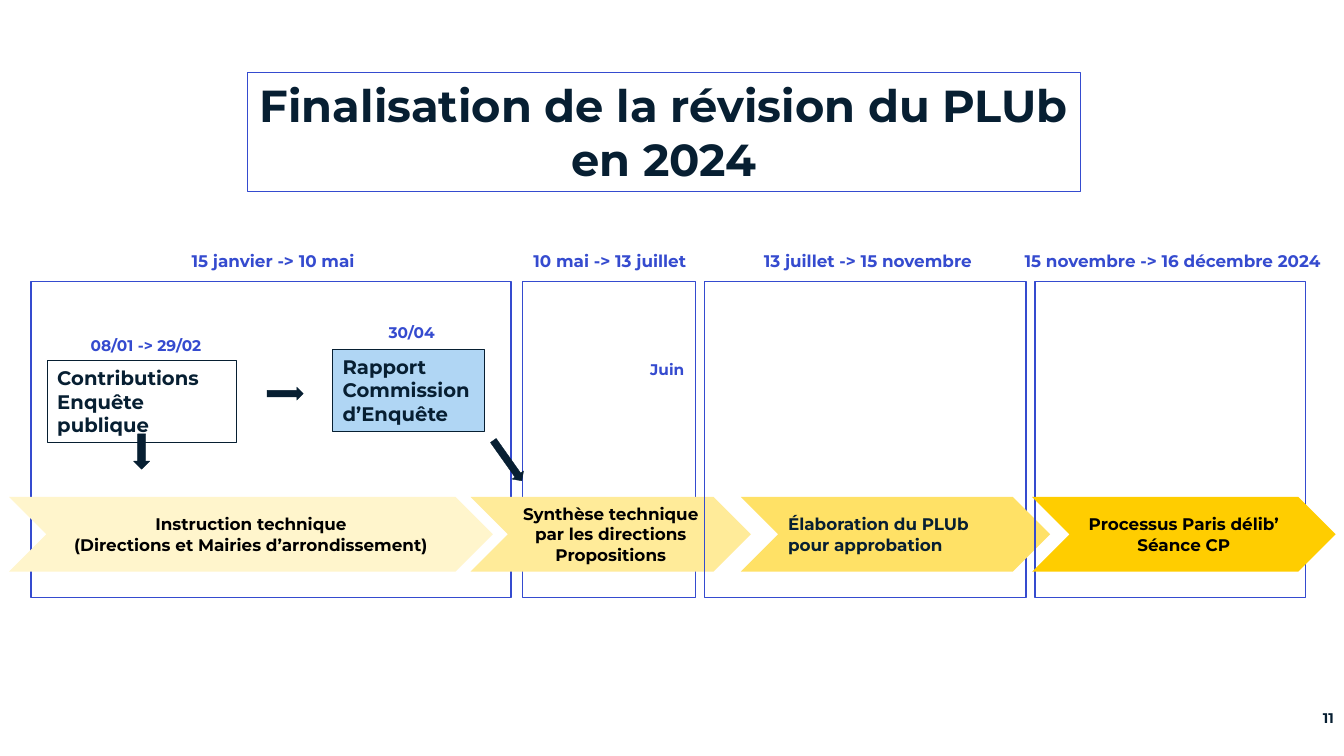
from pptx import Presentation
from pptx.dml.color import RGBColor
from pptx.enum.shapes import MSO_SHAPE
from pptx.enum.text import MSO_ANCHOR, PP_ALIGN
from pptx.util import Pt

RECTANGLE = MSO_SHAPE.RECTANGLE
CHEVRON = MSO_SHAPE.CHEVRON
ARROW = MSO_SHAPE.RIGHT_ARROW
LEFT, CENTER, RIGHT = PP_ALIGN.LEFT, PP_ALIGN.CENTER, PP_ALIGN.RIGHT
TOP, MIDDLE = MSO_ANCHOR.TOP, MSO_ANCHOR.MIDDLE

FONT = "Montserrat"
NAVY, BLUE, BLACK, WHITE = "071F32", "354BCF", "000000", "FFFFFF"

# Each phase: date, its left and width; frame left and width;
# chevron left and width, fill, text colour, alignment, lines
PHASES = [
    ("15 janvier -> 10 mai", 128.9, 132.5, 22.3, 342.7,
     6.5, 345.6, "FFF5CC", BLACK, CENTER,
     ["Instruction technique", "(Directions et Mairies d’arrondissement)"]),
    ("10 mai -> 13 juillet", 371.5, 128.2, 373, 123.8,
     336.2, 200.2, "FFEB99", BLACK, CENTER,
     ["Synthèse technique par les directions Propositions"]),
    ("13 juillet -> 15 novembre", 535.7, 168.5, 503.3, 229.7,
     529.2, 221, "FFE166", NAVY, LEFT,
     ["Élaboration du PLUb pour approbation"]),
    ("15 novembre -> 16 décembre 2024", 721.4, 232.6, 739.4, 193,
     737.3, 216.7, "FFCD00", BLACK, CENTER,
     ["Processus Paris délib’", "Séance CP"]),
]


def color(value):
    return RGBColor.from_string(value)


def write(shape, lines, size, text_color, align=LEFT, anchor=TOP, wrap=True):
    frame = shape.text_frame
    frame.word_wrap = wrap
    frame.vertical_anchor = anchor
    for index, line in enumerate(lines):
        paragraph = frame.add_paragraph() if index else frame.paragraphs[0]
        paragraph.alignment = align
        run = paragraph.add_run()
        run.text = line
        run.font.name = FONT
        run.font.size = Pt(size)
        run.font.bold = True
        run.font.color.rgb = color(text_color)


def add_shape(slide, kind, left, top, width, height,
              fill=None, line=None, line_width=0.75):
    shape = slide.shapes.add_shape(kind, Pt(left), Pt(top), Pt(width), Pt(height))
    shape.shadow.inherit = False
    if fill:
        shape.fill.solid()
        shape.fill.fore_color.rgb = color(fill)
    else:
        shape.fill.background()
    if line:
        shape.line.color.rgb = color(line)
        shape.line.width = Pt(line_width)
    else:
        shape.line.fill.background()
    return shape


def add_arrow(slide, left, top, width, height, rotation=0):
    arrow = add_shape(slide, ARROW, left, top, width, height, NAVY, NAVY, 0.25)
    arrow.rotation = rotation


def add_label(slide, text, left, top, width, size):
    label = slide.shapes.add_textbox(Pt(left), Pt(top), Pt(width), Pt(21))
    write(label, [text], size, BLUE, CENTER, wrap=False)


def add_step(slide, text, left, top, width, fill):
    step = add_shape(slide, RECTANGLE, left, top, width, 58.3, fill, NAVY)
    write(step, [text], 14, NAVY)


def add_phase(slide, date, date_left, date_width, frame_left, frame_width,
              chevron_left, chevron_width, fill, text_color, align, lines):
    add_label(slide, date, date_left, 175.7, date_width, 12)
    add_shape(slide, RECTANGLE, frame_left, 200.9, frame_width, 226.1,
              line=BLUE, line_width=1)
    chevron = add_shape(slide, CHEVRON, chevron_left, 355, chevron_width, 53.3, fill)
    write(chevron, lines, 12, text_color, align, MIDDLE)


def add_page_number(slide, number):
    box = slide.shapes.add_textbox(Pt(917.3), Pt(501.8), Pt(42.5), Pt(20.2))
    write(box, [number], 10, NAVY, RIGHT, MIDDLE)
    box.text_frame.paragraphs[0].line_spacing = 1.15


def main():
    presentation = Presentation()
    presentation.slide_width = Pt(960)
    presentation.slide_height = Pt(540)
    slide = presentation.slides.add_slide(presentation.slide_layouts[6])

    # Title
    title = add_shape(slide, RECTANGLE, 177.1, 51.8, 594.7, 85, line=BLUE)
    write(title, ["Finalisation de la révision du PLUb en 2024"], 32, NAVY, CENTER)

    # Public inquiry steps
    add_step(slide, "Contributions Enquête publique", 33.8, 257.8, 135.4, WHITE)
    add_step(slide, "Rapport Commission d’Enquête", 237.6, 249.8, 108.7, "B0D6F4")
    add_label(slide, "08/01 -> 29/02", 55.4, 236.2, 97.9, 11)
    add_label(slide, "30/04", 270, 227.5, 48.2, 11)
    add_label(slide, "Juin", 457.2, 253.4, 38.9, 11)

    # Timeline phases
    for phase in PHASES:
        add_phase(slide, *phase)

    # Arrows between the steps and the timeline
    add_arrow(slide, 190.8, 276.5, 25.9, 9.4)
    add_arrow(slide, 88.6, 316.8, 25.2, 11.5, 90)
    add_arrow(slide, 344.9, 324, 35.3, 10.1, 54.7)

    add_page_number(slide, "11")
    presentation.save("out.pptx")


if __name__ == "__main__":
    main()
